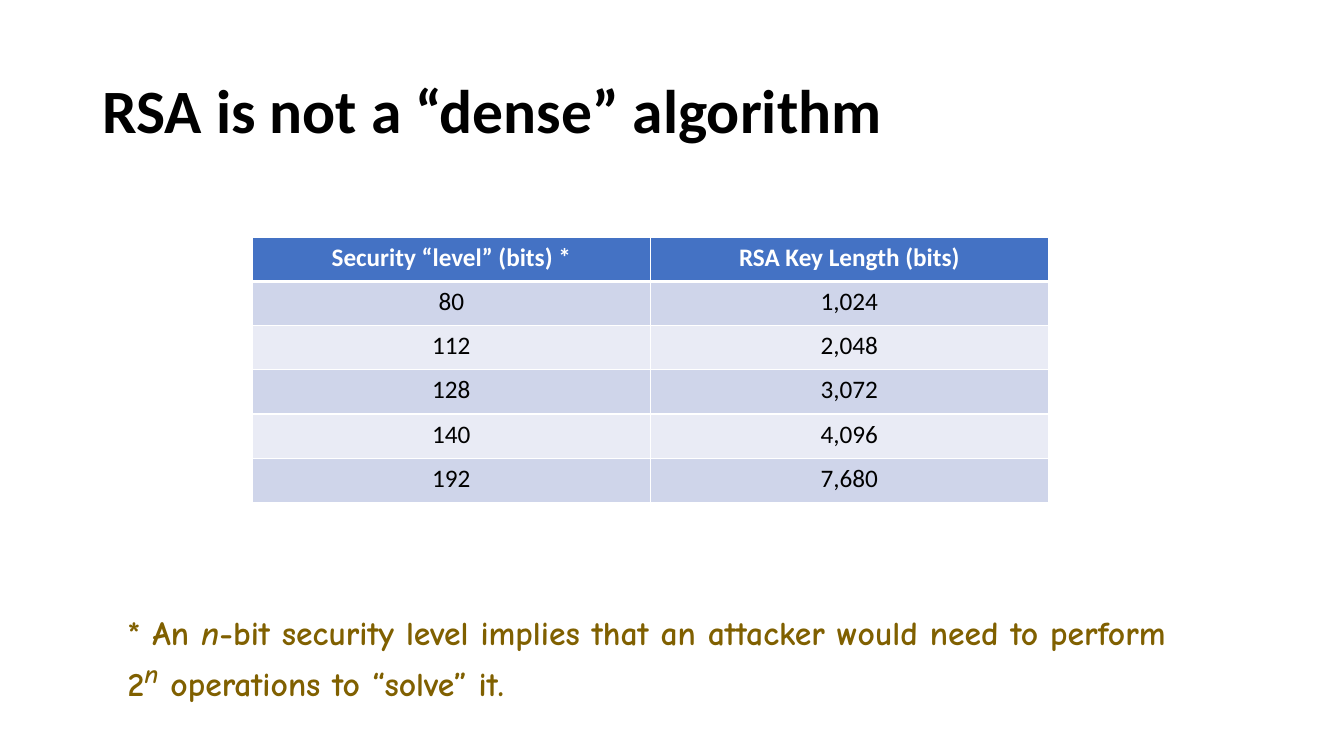
import pptx
import pptx.dml.color
import pptx.enum.text
import pptx.oxml
import pptx.oxml.ns
import pptx.util
from pptx.util import Cm

COLOURS = {
    "text": "000000",
    "white": "FFFFFF",
    "header": "4472C4",
    "band_dark": "CFD5EA",
    "band_light": "E9EBF5",
    "footnote": "806000",
}


class SlideBuilder:
    heading_font = "Calibri"
    footnote_font = "Comic Neue"

    def __init__(self, presentation):
        self.slide = presentation.slides.add_slide(presentation.slide_layouts[5])

    def colour(self, name):
        return pptx.dml.color.RGBColor.from_string(COLOURS[name])

    def style(self, font, face, size, colour, bold=False):
        font.name = face
        font.size = pptx.util.Pt(size)
        font.bold = bold
        font.color.rgb = self.colour(colour)

    def title(self, wording, left, top, width, height):
        title = self.slide.shapes.title
        title.left, title.top, title.width, title.height = left, top, width, height
        title.text_frame.text = wording
        title.text_frame.vertical_anchor = pptx.enum.text.MSO_ANCHOR.MIDDLE
        title.text_frame.auto_size = pptx.enum.text.MSO_AUTO_SIZE.NONE
        heading = title.text_frame.paragraphs[0]
        heading.alignment = pptx.enum.text.PP_ALIGN.LEFT
        heading.line_spacing = 0.9
        self.style(heading.font, self.heading_font, 44, "text", True)

    def borders(self, cell, top, bottom):
        properties = cell._tc.get_or_add_tcPr()
        for position, (side, points) in enumerate(
            [("L", 1), ("R", 1), ("T", top), ("B", bottom)]
        ):
            border = pptx.oxml.parse_xml(
                f'<a:ln{side} {pptx.oxml.ns.nsdecls("a")} w="{pptx.util.Pt(points)}">'
                f'<a:solidFill><a:srgbClr val="{COLOURS["white"]}"/></a:solidFill>'
                f"</a:ln{side}>"
            )
            properties.insert(position, border)

    def table(self, rows, left, top, width, height):
        key_lengths = self.slide.shapes.add_table(
            len(rows), len(rows[0]), left, top, width, height
        ).table
        for row_index, row in enumerate(rows):
            header = row_index == 0
            band = "header" if header else ("band_light", "band_dark")[row_index % 2]
            for column_index, value in enumerate(row):
                cell = key_lengths.cell(row_index, column_index)
                cell.text = value
                cell.fill.solid()
                cell.fill.fore_color.rgb = self.colour(band)
                self.borders(cell, 3 if row_index == 1 else 1, 3 if header else 1)
                entry = cell.text_frame.paragraphs[0]
                entry.alignment = pptx.enum.text.PP_ALIGN.CENTER
                self.style(
                    entry.font, self.heading_font, 18,
                    "white" if header else "text", header,
                )

    def footnote(self, pieces, left, top, width, height):
        frame = self.slide.shapes.add_textbox(left, top, width, height).text_frame
        frame.word_wrap = True
        frame.auto_size = pptx.enum.text.MSO_AUTO_SIZE.SHAPE_TO_FIT_TEXT
        note = frame.paragraphs[0]
        self.style(note.font, self.footnote_font, 24, "footnote", True)
        for wording, italic, raised in pieces:
            piece = note.add_run()
            piece.text = wording
            piece.font.italic = italic
            if raised:
                piece.font.size = pptx.util.Pt(32)
                piece.font._element.set("baseline", "30000")


def main():
    presentation = pptx.Presentation()
    presentation.slide_width = Cm(33.87)
    presentation.slide_height = Cm(19.05)
    builder = SlideBuilder(presentation)
    builder.title(
        "RSA is not a “dense” algorithm", Cm(2.33), Cm(1.01), Cm(29.21), Cm(3.68)
    )
    builder.table(
        [
            ("Security “level” (bits) *", "RSA Key Length (bits)"),
            ("80", "1,024"),
            ("112", "2,048"),
            ("128", "3,072"),
            ("140", "4,096"),
            ("192", "7,680"),
        ],
        Cm(6.36), Cm(5.98), Cm(20.06), Cm(6.68),
    )
    builder.footnote(
        [
            ("* An ", False, False),
            ("n", True, False),
            ("-bit security level implies that an attacker would need to perform 2",
             False, False),
            ("n", True, True),
            (" operations to “solve” it.", False, False),
        ],
        Cm(2.97), Cm(15.29), Cm(26.9), Cm(1.27),
    )
    presentation.save("out.pptx")


if __name__ == "__main__":
    main()
